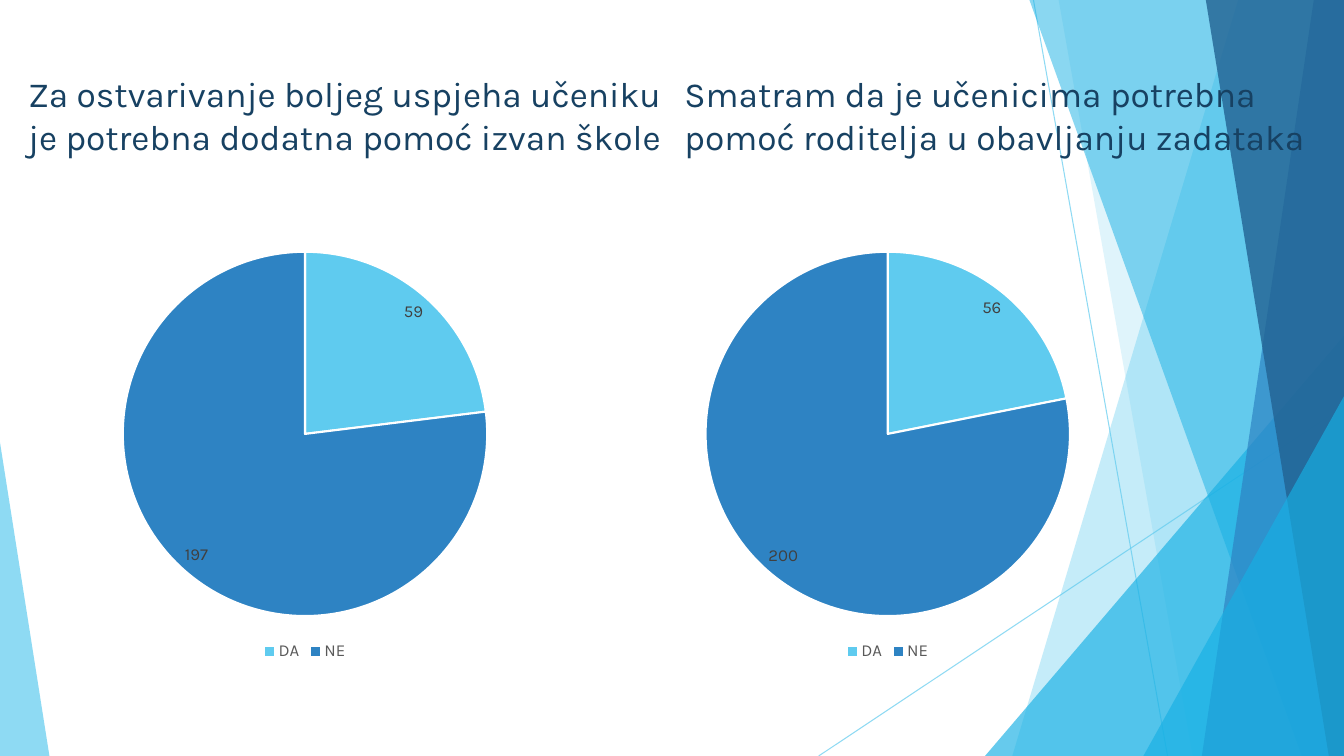
from dataclasses import dataclass

import lxml.etree
import pptx
import pptx.chart.data
import pptx.dml.color
import pptx.enum.chart
import pptx.enum.shapes
import pptx.enum.text
import pptx.oxml.ns
import pptx.util

Inches = pptx.util.Inches
Pt = pptx.util.Pt
qn = pptx.oxml.ns.qn

WIDTH, HEIGHT = 13.33, 7.5
FONT = "Karla"
SKY, AZURE, BLUE, NAVY = "5FCBEF", "17B0E4", "2E83C3", "226292"


@dataclass
class Ray:
    start: tuple[float, float]
    end: tuple[float, float]


@dataclass
class Pane:
    """A full-height facet that reaches the right edge of the page."""
    top_x: float
    bottom_x: float
    color: str
    opacity: int


@dataclass
class Corner:
    """A right triangle standing on the bottom edge; apex 0 is left, 1 is right."""
    left: float
    width: float
    height: float
    apex: int
    color: str
    opacity: int


@dataclass
class Survey:
    left: float
    question: tuple[str, str]
    answers: tuple[int, int]


RAYS = [Ray((10.25, 0), (11.58, HEIGHT)), Ray((WIDTH, 4.03), (8.12, HEIGHT))]
FACETS = [
    Pane(12.28, 10.04, SKY, 36),
    Pane(10.5, 11.83, SKY, 20),
    Corner(9.77, 3.56, 4.17, 1, AZURE, 66),
    Pane(10.21, 12.91, AZURE, 50),
    Pane(13.03, 11.92, BLUE, 70),
    Pane(11.96, 13.18, NAVY, 80),
    Corner(11.34, 1.99, 3.57, 1, AZURE, 66),
    Corner(0, 0.49, 3.11, 0, SKY, 70),
]
SURVEYS = [
    Survey(0.74, ("Za ostvarivanje boljeg uspjeha učeniku",
                  "je potrebna dodatna pomoć izvan škole"), (59, 197)),
    Survey(6.52, ("Smatram da je učenicima potrebna",
                  "pomoć roditelja u obavljanju zadataka"), (56, 200)),
]


def rgb(color: str) -> pptx.dml.color.RGBColor:
    return pptx.dml.color.RGBColor.from_string(color)


def paint(fill, color: str, opacity: int = 100) -> None:
    fill.solid()
    fill.fore_color.rgb = rgb(color)
    if opacity < 100:
        element = fill._xPr.find(qn("a:solidFill"))[0]
        lxml.etree.SubElement(element, qn("a:alpha"), val=str(opacity * 1000))


def set_font(font, size: float, color: str) -> None:
    font.name = FONT
    font.size = Pt(size)
    font.color.rgb = rgb(color)


def draw_ray(page, ray: Ray) -> None:
    line = page.shapes.add_connector(
        pptx.enum.shapes.MSO_CONNECTOR.STRAIGHT,
        *map(Inches, ray.start + ray.end))
    line.line.width = Pt(0.75)
    paint(line.line.fill, SKY, 70)
    lxml.etree.SubElement(line._element.spPr, qn("a:effectLst"))


def draw_facet(page, facet: Pane | Corner) -> None:
    if isinstance(facet, Pane):
        builder = page.shapes.build_freeform(
            Inches(facet.top_x), 0, scale=1.0)
        corners = [(WIDTH, 0), (WIDTH, HEIGHT), (facet.bottom_x, HEIGHT)]
        builder.add_line_segments(
            [(Inches(x), Inches(y)) for x, y in corners], close=True)
        shape = builder.convert_to_shape()
    else:
        shape = page.shapes.add_shape(
            pptx.enum.shapes.MSO_SHAPE.ISOSCELES_TRIANGLE,
            Inches(facet.left), Inches(HEIGHT - facet.height),
            Inches(facet.width), Inches(facet.height))
        shape.adjustments[0] = facet.apex
    shape.shadow.inherit = False
    shape.line.fill.background()
    paint(shape.fill, facet.color, facet.opacity)


def draw_questions(page) -> None:
    """Set the questions side by side, split by a tab stop."""
    box = page.shapes.add_textbox(
        Inches(0.18), Inches(0.67), Inches(12.88), Inches(1.44))
    frame = box.text_frame
    frame.word_wrap = True
    frame.margin_right = 0
    frame.vertical_anchor = pptx.enum.text.MSO_ANCHOR.TOP
    para = frame.paragraphs[0]
    first, second = zip(*(survey.question for survey in SURVEYS))
    para.add_run().text = "\t".join(first)
    para.add_line_break()
    para.add_run().text = "\t".join(second)
    set_font(para.font, 25.2, "174162")
    stops = lxml.etree.Element(qn("a:tabLst"))
    lxml.etree.SubElement(
        stops, qn("a:tab"), pos=str(Inches(6.51)), algn="l")
    para._p.pPr.insert(0, stops)


def draw_pie(page, survey: Survey) -> None:
    data = pptx.chart.data.CategoryChartData()
    data.categories = ["DA", "NE"]
    data.add_series("Series 1", survey.answers)
    chart = page.shapes.add_chart(
        pptx.enum.chart.XL_CHART_TYPE.PIE, Inches(survey.left), Inches(2.36),
        Inches(4.57), Inches(4.24), data).chart
    set_font(chart.font, 10, "000000")
    chart.has_title = False
    chart.has_legend = True
    chart.legend.position = pptx.enum.chart.XL_LEGEND_POSITION.BOTTOM
    chart.legend.include_in_layout = False
    set_font(chart.legend.font, 12, "595959")

    plot = chart.plots[0]
    plot.vary_by_categories = True
    series = plot.series[0]
    for index, color in enumerate((SKY, BLUE)):
        style = series.points[index].format
        paint(style.fill, color)
        paint(style.line.fill, "FFFFFF")
        style.line.width = Pt(1.5)
    labels = series.data_labels
    labels.show_value = True
    labels.show_percentage = False
    labels.position = pptx.enum.chart.XL_LABEL_POSITION.BEST_FIT
    set_font(labels.font, 12, "404040")


def main() -> None:
    deck = pptx.Presentation()
    deck.slide_width, deck.slide_height = Inches(WIDTH), Inches(HEIGHT)
    page = deck.slides.add_slide(deck.slide_layouts[6])
    for ray in RAYS:
        draw_ray(page, ray)
    for facet in FACETS:
        draw_facet(page, facet)
    draw_questions(page)
    for survey in SURVEYS:
        draw_pie(page, survey)
    deck.save("out.pptx")


if __name__ == "__main__":
    main()
